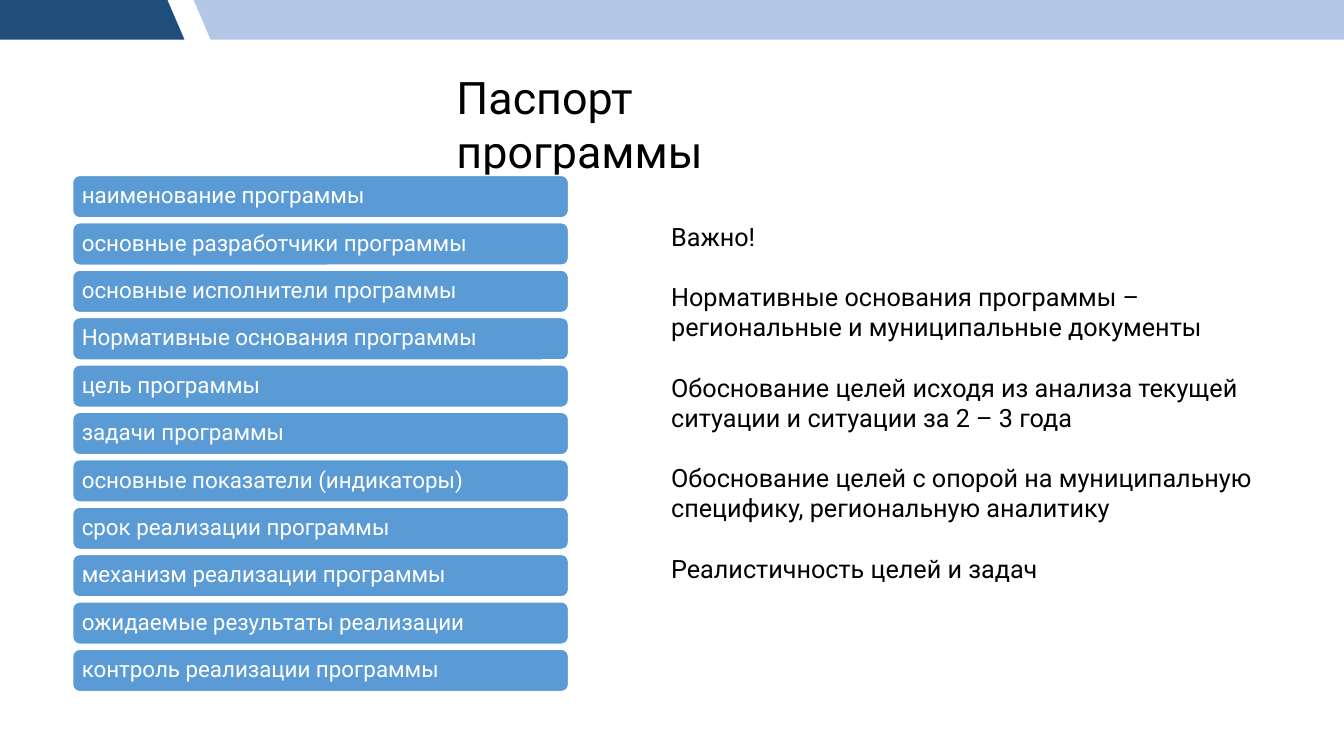
from pptx import Presentation
from pptx.dml.color import RGBColor
from pptx.enum import shapes, text
from pptx.oxml import parse_xml
from pptx.oxml.ns import nsdecls
from pptx.util import Cm, Pt

FONT = "Roboto"
PAGE_WIDTH, PAGE_HEIGHT = 33.87, 19.05
HEADER_HEIGHT = 1

SECTIONS = [
    "наименование программы",
    "основные разработчики программы",
    "основные исполнители программы",
    "Нормативные основания программы",
    "цель программы",
    "задачи программы",
    "основные показатели (индикаторы)",
    "срок реализации программы",
    "механизм реализации программы",
    "ожидаемые результаты реализации",
    "контроль реализации программы",
]
NOTES = [
    "Важно!",
    "Нормативные основания программы – региональные и муниципальные документы",
    "Обоснование целей исходя из анализа текущей ситуации и ситуации за 2 – 3 года",
    "Обоснование целей с опорой на муниципальную специфику, региональную аналитику",
    "Реалистичность целей и задач",
]


def colour(value):
    return RGBColor.from_string(value)


def place(shape, left, top, width, height):
    shape.left, shape.top = Cm(left), Cm(top)
    shape.width, shape.height = Cm(width), Cm(height)


def set_frame(frame, anchor):
    frame.word_wrap = True
    frame.auto_size = text.MSO_AUTO_SIZE.NONE
    frame.vertical_anchor = anchor


def write(para, words, size, hex_colour, spacing=1.0):
    para.alignment = text.PP_ALIGN.LEFT
    para.line_spacing = spacing
    para.space_before = Pt(0)
    span = para.add_run()
    span.text = words
    span.font.name = FONT
    span.font.size = Pt(size)
    span.font.color.rgb = colour(hex_colour)


def remove_bullet(para):
    properties = para._p.get_or_add_pPr()
    properties.set("marL", "0")
    properties.set("indent", "0")
    properties.append(parse_xml(f"<a:buNone {nsdecls('a')}/>"))


def add_header_band(page, corners, hex_colour):
    points = [(Cm(x), Cm(y)) for x, y in corners]
    builder = page.shapes.build_freeform(*points[0])
    builder.add_line_segments(points[1:], close=True)
    band = builder.convert_to_shape()
    band.shadow.inherit = False
    band.fill.solid()
    band.fill.fore_color.rgb = colour(hex_colour)
    band.line.fill.background()


def add_section_bar(page, words, top):
    bar = page.shapes.add_shape(
        shapes.MSO_SHAPE.ROUNDED_RECTANGLE, Cm(1.83), Cm(top), Cm(12.5), Cm(1.07))
    bar.shadow.inherit = False
    bar.fill.solid()
    bar.fill.fore_color.rgb = colour("5B9BD5")
    bar.line.color.rgb = colour("FFFFFF")
    bar.line.width = Pt(1)
    frame = bar.text_frame
    set_frame(frame, text.MSO_ANCHOR.MIDDLE)
    frame.margin_left = frame.margin_right = Cm(0.18)
    frame.margin_top = frame.margin_bottom = Cm(0.1)
    write(frame.paragraphs[0], words, 16, "FFFFFF", 0.9)


def fill_title(box):
    place(box, 11.25, 1.63, 11.1, 3)
    set_frame(box.text_frame, text.MSO_ANCHOR.TOP)
    write(box.text_frame.paragraphs[0], "Паспорт программы", 32, "000000")


def fill_notes(box):
    place(box, 16.66, 5.44, 15.21, 9.5)
    frame = box.text_frame
    set_frame(frame, text.MSO_ANCHOR.TOP)
    for index, words in enumerate(NOTES):
        para = frame.add_paragraph() if index else frame.paragraphs[0]
        remove_bullet(para)
        write(para, words, 18, "000000")
        if index:
            para.space_before = Pt(21.5)


def main():
    deck = Presentation()
    deck.slide_width, deck.slide_height = Cm(PAGE_WIDTH), Cm(PAGE_HEIGHT)
    page = deck.slides.add_slide(deck.slide_layouts[1])

    # Header bands with slanted ends
    add_header_band(page, [(0, 0), (4.22, 0), (4.65, HEADER_HEIGHT),
                           (0, HEADER_HEIGHT)], "1E4E79")
    add_header_band(page, [(4.88, 0), (PAGE_WIDTH, 0), (PAGE_WIDTH, HEADER_HEIGHT),
                           (5.31, HEADER_HEIGHT)], "B4C7E7")

    # Title and notes
    fill_title(page.shapes.title)
    fill_notes(page.placeholders[1])

    # Sections of the programme passport
    for index, words in enumerate(SECTIONS):
        add_section_bar(page, words, 4.42 + index * 1.194)

    deck.save("out.pptx")


if __name__ == "__main__":
    main()
